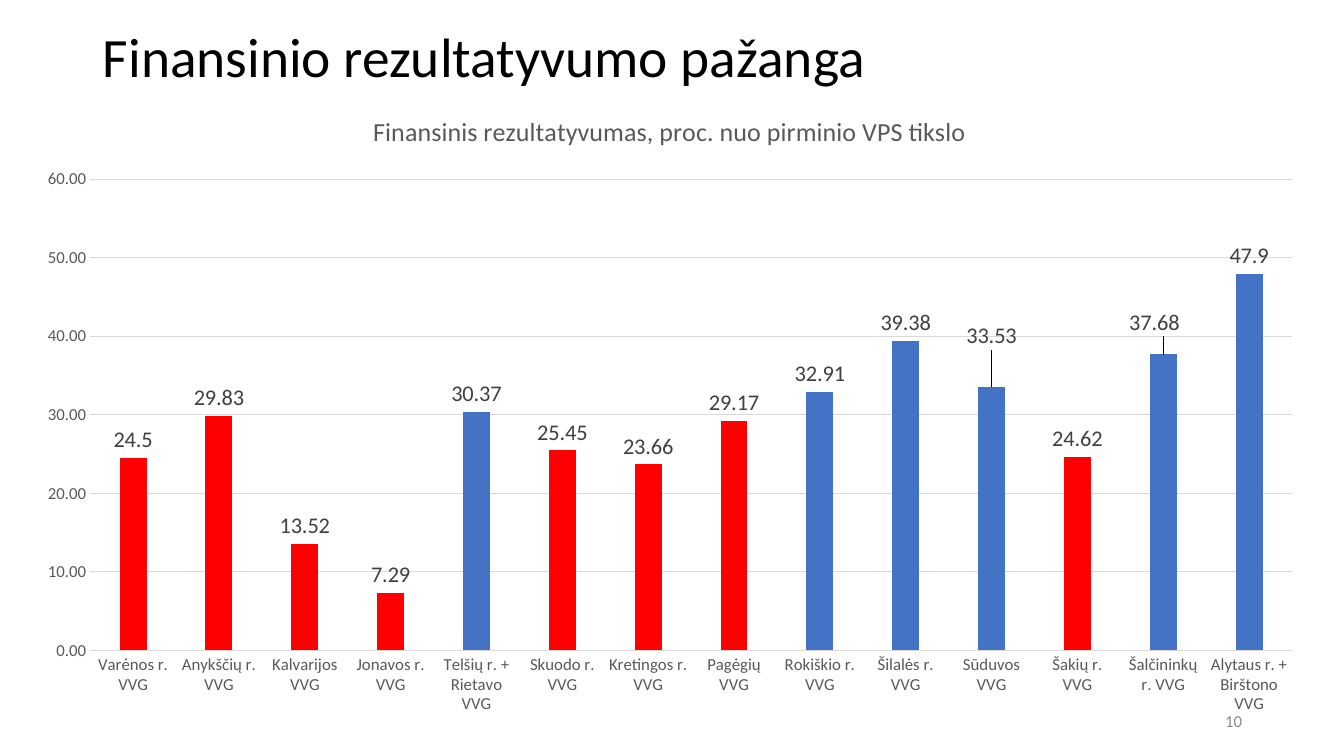
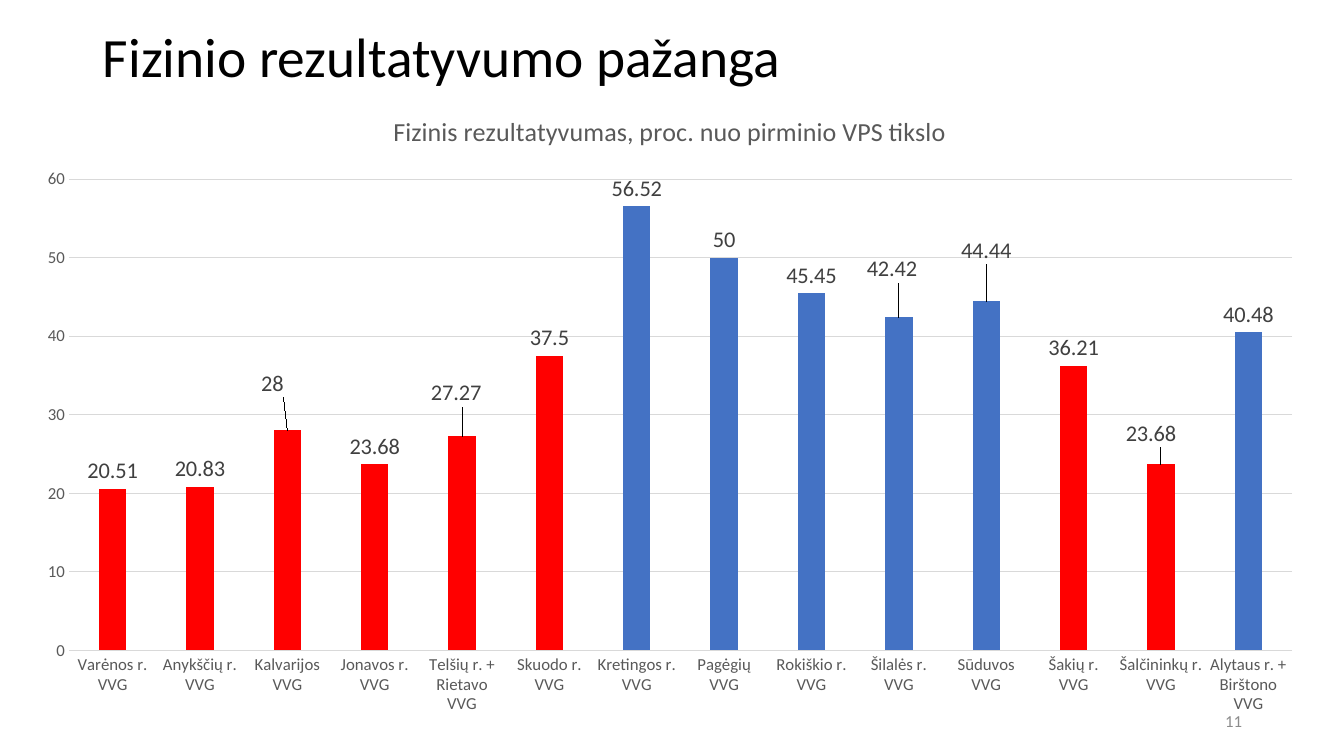
from dataclasses import dataclass

from lxml.etree import SubElement
from pptx import Presentation
from pptx.chart.data import CategoryChartData
from pptx.dml.color import RGBColor
from pptx.enum.chart import XL_CHART_TYPE as ChartType
from pptx.enum.chart import XL_LABEL_POSITION as LabelPosition
from pptx.enum.chart import XL_TICK_MARK as TickMark
from pptx.enum.text import MSO_ANCHOR as Anchor
from pptx.enum.text import PP_ALIGN as Align
from pptx.oxml.ns import qn
from pptx.util import Pt

EMU_PER_PX = 914400 / 100.8
SLIDE_SIZE = (1344, 756)
TITLE_BOX = (93, 30, 1159, 59)
CHART_BOX = (22, 90, 1296, 637)
NUMBER_BOX = (950, 701, 302, 40)

GROUPS = [
    "Varėnos r. VVG", "Anykščių r. VVG", "Kalvarijos VVG", "Jonavos r. VVG",
    "Telšių r. + Rietavo VVG", "Skuodo r. VVG", "Kretingos r. VVG",
    "Pagėgių VVG", "Rokiškio r. VVG", "Šilalės r. VVG", "Sūduvos VVG",
    "Šakių r. VVG", "Šalčininkų r. VVG", "Alytaus r. + Birštono VVG",
]


@dataclass(frozen=True)
class Theme:
    font: str = "Calibri"
    title: str = "000000"
    muted: str = "595959"
    label: str = "404040"
    number: str = "8C8C8C"
    grid: str = "D9D9D9"
    reached: str = "4472C4"
    behind: str = "FF0000"
    title_size: float = 39.6
    chart_title_size: float = 18.6
    label_size: float = 16
    small_size: float = 12
    line_width: float = 0.75


@dataclass(frozen=True)
class Progress:
    """One slide's results; shifts holds label offsets in px by bar index."""
    title: str
    chart_title: str
    number: int
    values: tuple
    target: float
    axis_format: str
    shifts: dict


SLIDES = [
    Progress(
        "Finansinio rezultatyvumo pažanga",
        "Finansinis rezultatyvumas, proc. nuo pirminio VPS tikslo",
        10,
        (24.5, 29.83, 13.52, 7.29, 30.37, 25.45, 23.66,
         29.17, 32.91, 39.38, 33.53, 24.62, 37.68, 47.9),
        30, "0.00", {10: (0, -33), 12: (-9, -14)},
    ),
    Progress(
        "Fizinio rezultatyvumo pažanga",
        "Fizinis rezultatyvumas, proc. nuo pirminio VPS tikslo",
        11,
        (20.51, 20.83, 28, 23.68, 27.27, 37.5, 56.52,
         50, 45.45, 42.42, 44.44, 36.21, 23.68, 40.48),
        40, "General",
        {2: (-15, -29), 4: (-6, -25), 9: (-7, -30), 10: (0, -33), 12: (-10, -13)},
    ),
]


def px(*lengths):
    return [round(length * EMU_PER_PX) for length in lengths]


class SlideBuilder:
    def __init__(self, theme):
        self.theme = theme
        self.deck = Presentation()
        self.deck.slide_width, self.deck.slide_height = px(*SLIDE_SIZE)
        self.slide = None

    def new_slide(self):
        self.slide = self.deck.slides.add_slide(self.deck.slide_layouts[6])

    def style_font(self, font, size, color):
        font.name = self.theme.font
        font.size = Pt(size)
        font.bold = False
        font.color.rgb = RGBColor.from_string(color)

    def style_line(self, line):
        line.color.rgb = RGBColor.from_string(self.theme.grid)
        line.width = Pt(self.theme.line_width)

    def text(self, place, words, size, color, align=Align.LEFT, spacing=1.0):
        frame = self.slide.shapes.add_textbox(*px(*place)).text_frame
        frame.word_wrap = True
        frame.vertical_anchor = Anchor.MIDDLE
        para = frame.paragraphs[0]
        para.alignment = align
        para.line_spacing = spacing
        span = para.add_run()
        span.text = words
        self.style_font(span.font, size, color)

    def title(self, words):
        self.text(TITLE_BOX, words, self.theme.title_size, self.theme.title, spacing=0.9)

    def page_number(self, number):
        self.text(NUMBER_BOX, str(number), self.theme.small_size,
                  self.theme.number, Align.RIGHT)

    def chart(self, progress):
        data = CategoryChartData()
        data.categories = GROUPS
        data.add_series(progress.chart_title, progress.values)
        chart = self.slide.shapes.add_chart(
            ChartType.COLUMN_CLUSTERED, *px(*CHART_BOX), data).chart
        self.style_font(chart.font, 10, self.theme.title)
        chart.has_legend = False
        chart.has_title = True
        span = chart.chart_title.text_frame.paragraphs[0].add_run()
        span.text = progress.chart_title
        self.style_font(span.font, self.theme.chart_title_size, self.theme.muted)
        self.axes(chart, progress.axis_format)
        plot = chart.plots[0]
        plot.gap_width = 219
        plot.overlap = -27
        plot.vary_by_categories = False
        self.bars(plot.series[0], progress)
        self.bar_labels(plot.series[0], progress.shifts)

    def axes(self, chart, axis_format):
        for axis in (chart.category_axis, chart.value_axis):
            axis.major_tick_mark = axis.minor_tick_mark = TickMark.NONE
            self.style_font(axis.tick_labels.font, self.theme.small_size, self.theme.muted)
        self.style_line(chart.category_axis.format.line)
        scale = chart.value_axis
        scale.minimum_scale, scale.maximum_scale, scale.major_unit = 0, 60, 10
        scale.tick_labels.number_format = axis_format
        scale.tick_labels.number_format_is_linked = False
        scale.format.line.fill.background()
        scale.has_major_gridlines = True
        self.style_line(scale.major_gridlines.format.line)

    def bars(self, series, progress):
        """Fill the bars, marking those under the target."""
        series.invert_if_negative = False
        series.format.fill.solid()
        series.format.fill.fore_color.rgb = RGBColor.from_string(self.theme.reached)
        for index, value in enumerate(progress.values):
            if value < progress.target:
                fill = series.points[index].format.fill
                fill.solid()
                fill.fore_color.rgb = RGBColor.from_string(self.theme.behind)

    def bar_labels(self, series, shifts):
        labels = series.data_labels
        labels.show_value = True
        labels.number_format = "General"
        labels.number_format_is_linked = False
        labels.position = LabelPosition.OUTSIDE_END
        self.style_font(labels.font, self.theme.label_size, self.theme.label)
        for index, shift in shifts.items():
            label = series.points[index].data_label
            label.position = LabelPosition.OUTSIDE_END
            self.style_font(label.font, self.theme.label_size, self.theme.label)
            self.shift_label(series, index, shift)

    def shift_label(self, series, index, shift):
        """Move one label by a px offset, stored as a share of the chart size."""
        node = series._element.xpath(f'.//c:dLbl[c:idx/@val="{index}"]')[0]
        layout = SubElement(node, qn("c:layout"))
        node.insert(1, layout)
        manual = SubElement(layout, qn("c:manualLayout"))
        for name, offset, extent in zip("xy", shift, CHART_BOX[2:]):
            SubElement(manual, qn(f"c:{name}")).set("val", f"{offset / extent:.4f}")


def main():
    builder = SlideBuilder(Theme())
    for progress in SLIDES:
        builder.new_slide()
        builder.title(progress.title)
        builder.chart(progress)
        builder.page_number(progress.number)
    builder.deck.save("out.pptx")


if __name__ == "__main__":
    main()
